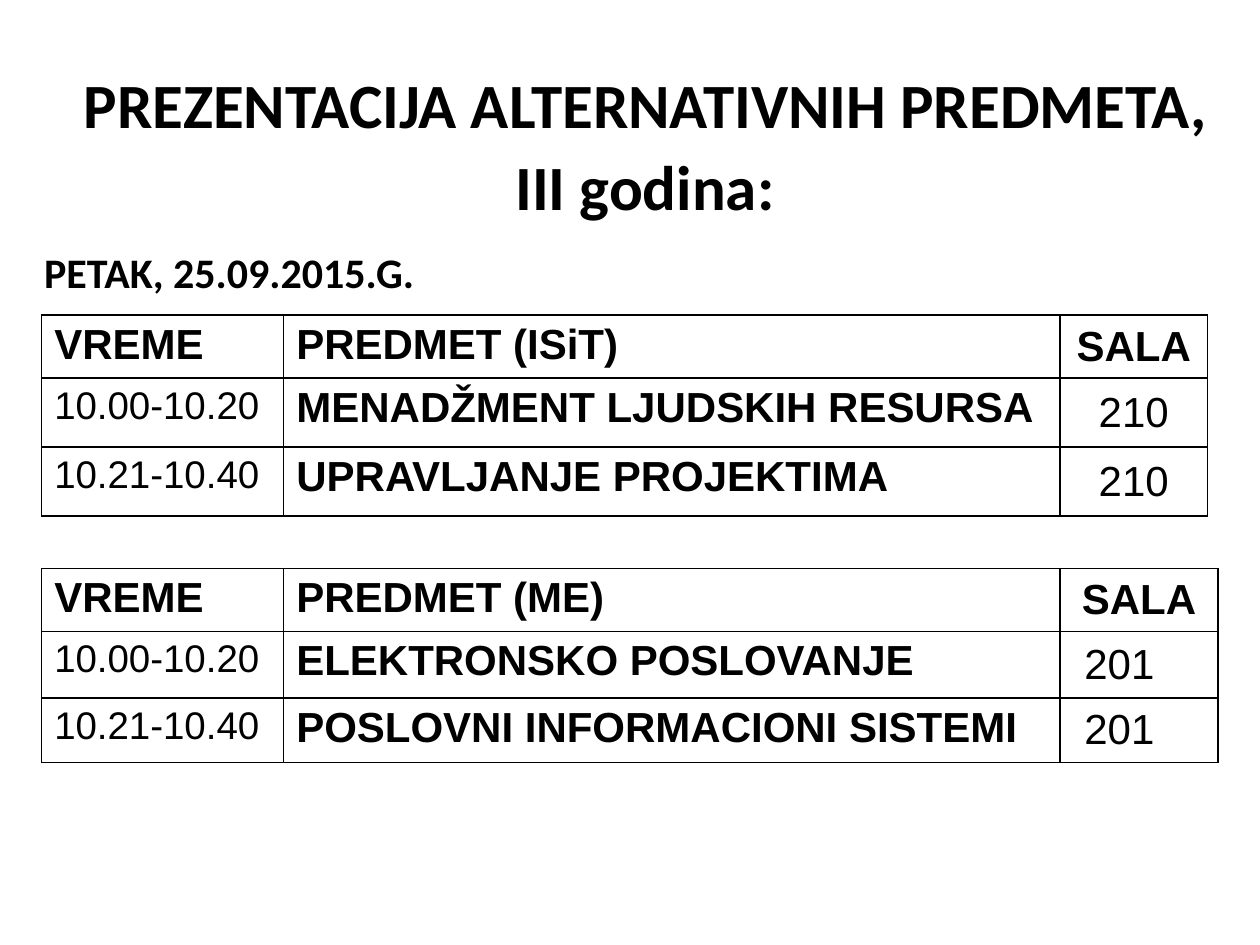
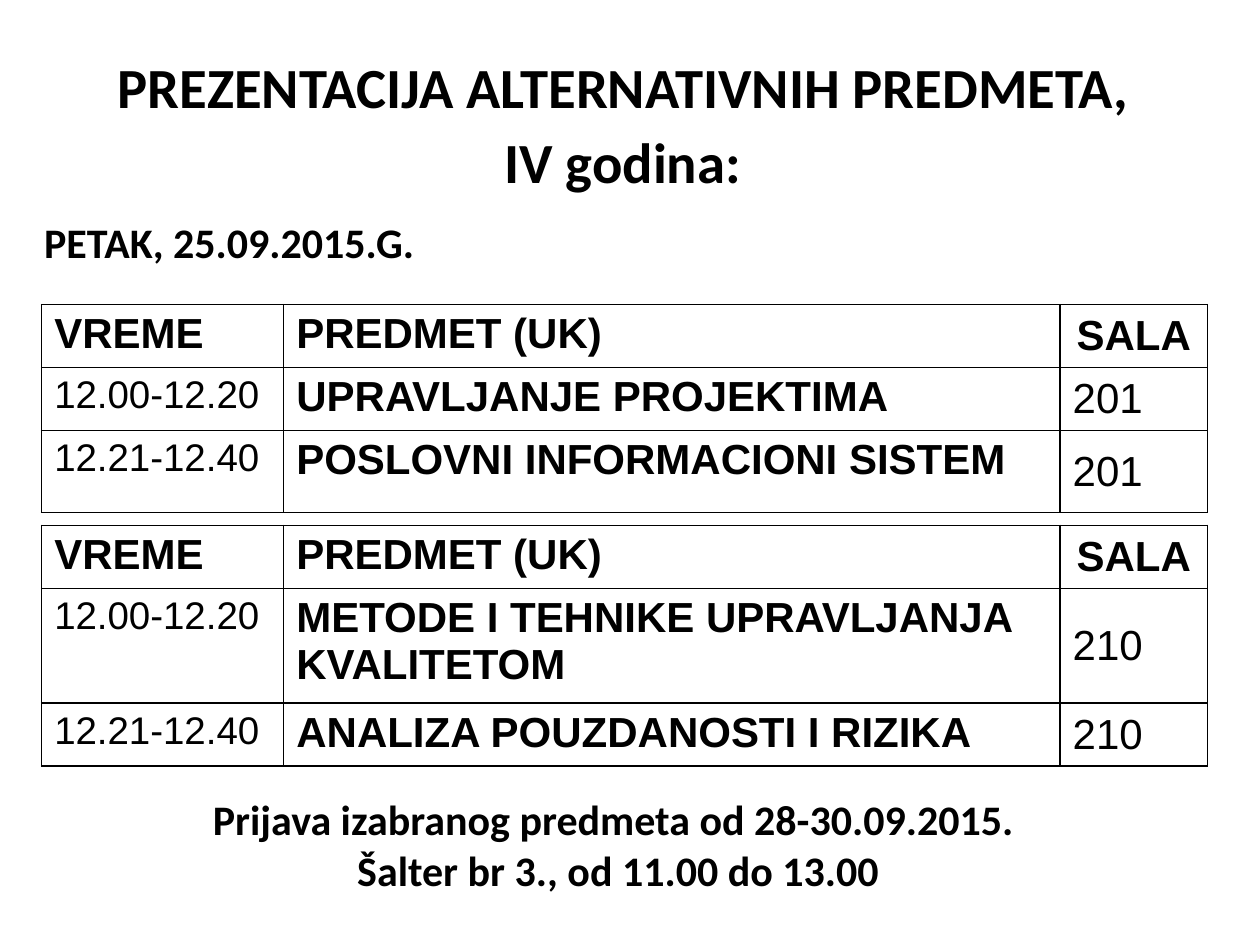
import dataclasses

import lxml.etree
import pptx
import pptx.dml.color
import pptx.enum.text
import pptx.oxml.ns
import pptx.util

Cm = pptx.util.Cm
Pt = pptx.util.Pt
ALIGN = pptx.enum.text.PP_ALIGN
ANCHOR = pptx.enum.text.MSO_ANCHOR


@dataclasses.dataclass(frozen=True)
class Theme:
    """Colours, fonts and sizes shared by both pages."""

    ink: str = "000000"
    paper: str = "FFFFFF"
    heading_font: str = "Calibri"
    table_font: str = "Arial"
    body_size: float = 24
    time_size: float = 22
    border_width: float = 1


@dataclasses.dataclass(frozen=True)
class Box:
    """A region of a page, in centimetres."""

    left: float
    top: float
    width: float
    height: float


THEME = Theme()
TABLE_LEFT = 0.84
TIME_WIDTH, SUBJECT_WIDTH, ROOM_WIDTH = 4.88, 15.65, 2.97


def add_text(para, text, *, size=THEME.body_size, font=THEME.heading_font, bold=True, align=ALIGN.LEFT):
    """Append formatted text to a paragraph, with a line break at each newline."""
    para.alignment = align
    for index, line in enumerate(text.split("\n")):
        if index:
            para.add_line_break()
        span = para.add_run()
        span.text = line
        span.font.name = font
        span.font.size = Pt(size)
        span.font.bold = bold
        span.font.color.rgb = pptx.dml.color.RGBColor.from_string(THEME.ink)


def add_frame(page, box, *, anchor=ANCHOR.MIDDLE, wrap=True):
    """Add an empty text box and return its text frame."""
    shape = page.shapes.add_textbox(Cm(box.left), Cm(box.top), Cm(box.width), Cm(box.height))
    frame = shape.text_frame
    frame.word_wrap = wrap
    frame.vertical_anchor = anchor
    return frame


def add_title(page, box, text, *, size, end_size):
    """Add the centred title, closed by a slightly larger space."""
    para = add_frame(page, box).paragraphs[0]
    add_text(para, text, size=size, align=ALIGN.CENTER)
    add_text(para, " ", size=end_size, align=ALIGN.CENTER)


def add_date(page, top):
    """Add the date line above the schedules."""
    frame = add_frame(page, Box(0.64, top, 8.03, 1.27), wrap=False)
    add_text(frame.paragraphs[0], "PETAK, 25.09.2015.G.")


def add_note(page, box, lines):
    """Add centred lines of closing information."""
    frame = add_frame(page, box, anchor=ANCHOR.TOP)
    for index, line in enumerate(lines):
        para = frame.add_paragraph() if index else frame.paragraphs[0]
        add_text(para, line, align=ALIGN.CENTER)


def style_cell(cell):
    """Give a cell four thin borders and no fill."""
    properties = cell._tc.get_or_add_tcPr()
    qn = pptx.oxml.ns.qn
    for side in ("a:lnL", "a:lnR", "a:lnT", "a:lnB"):
        line = lxml.etree.SubElement(properties, qn(side), w=str(Pt(THEME.border_width)))
        fill = lxml.etree.SubElement(line, qn("a:solidFill"))
        lxml.etree.SubElement(fill, qn("a:srgbClr"), val=THEME.ink)
    cell.fill.background()


def add_schedule(page, top, group, sessions, heights, *, room_width=ROOM_WIDTH, room_align=ALIGN.LEFT):
    """Add a table of times, subjects and rooms for one study group."""
    widths = (TIME_WIDTH, SUBJECT_WIDTH, room_width)
    rows = [("VREME", f"PREDMET ({group})", "SALA"), *sessions]
    table = page.shapes.add_table(
        len(rows), len(widths), Cm(TABLE_LEFT), Cm(top), Cm(sum(widths)), Cm(sum(heights))
    ).table
    table.first_row = table.horz_banding = False
    for column, width in zip(table.columns, widths):
        column.width = Cm(width)
    for row_index, (values, height) in enumerate(zip(rows, heights)):
        table.rows[row_index].height = Cm(height)
        header = row_index == 0
        formats = (
            {"bold": header, "size": THEME.body_size if header else THEME.time_size},
            {},
            {"bold": header, "align": ALIGN.CENTER if header else room_align},
        )
        for column_index, (text, style) in enumerate(zip(values, formats)):
            cell = table.cell(row_index, column_index)
            style_cell(cell)
            cell.vertical_anchor = ANCHOR.MIDDLE if column_index == 2 else ANCHOR.TOP
            add_text(cell.text_frame.paragraphs[0], text, font=THEME.table_font, **style)


def add_page(deck):
    """Add a blank page with the shared background."""
    page = deck.slides.add_slide(deck.slide_layouts[6])
    page.background.fill.solid()
    page.background.fill.fore_color.rgb = pptx.dml.color.RGBColor.from_string(THEME.paper)
    return page


def build_third_year(deck):
    """Build the page for the third year."""
    page = add_page(deck)
    add_title(
        page, Box(0, 0.76, 26.04, 4.32),
        "PREZENTACIJA ALTERNATIVNIH PREDMETA,\n III godina:", size=36, end_size=40,
    )
    add_date(page, 4.85)
    add_schedule(
        page, 6.35, "ISiT",
        [("10.00-10.20", "MENADŽMENT LJUDSKIH RESURSA", "210"),
         ("10.21-10.40", "UPRAVLJANJE PROJEKTIMA", "210")],
        (1.27, 1.39, 1.39), room_align=ALIGN.CENTER,
    )
    add_schedule(
        page, 11.46, "ME",
        [("10.00-10.20", "ELEKTRONSKO POSLOVANJE", " 201"),
         ("10.21-10.40", "POSLOVNI INFORMACIONI SISTEMI", " 201")],
        (1.27, 1.34, 1.3), room_width=3.18,
    )


def build_fourth_year(deck):
    """Build the page for the fourth year."""
    page = add_page(deck)
    add_title(
        page, Box(0, 0.76, 25.4, 3.48),
        "PREZENTACIJA ALTERNATIVNIH PREDMETA, \nIV godina:", size=32.4, end_size=36,
    )
    add_date(page, 4.24)
    add_schedule(
        page, 6.14, "UK",
        [("12.00-12.20", "UPRAVLJANJE PROJEKTIMA", "201"),
         ("12.21-12.40", "POSLOVNI INFORMACIONI SISTEM", "201")],
        (1.27, 1.27, 1.65),
    )
    add_schedule(
        page, 10.59, "UK",
        [("12.00-12.20", "METODE I TEHNIKE UPRAVLJANJA KVALITETOM", "210"),
         ("12.21-12.40", "ANALIZA POUZDANOSTI I RIZIKA", "210")],
        (1.27, 2.31, 1.27),
    )
    add_note(
        page, Box(4.01, 15.88, 16.71, 2.31),
        ("Prijava izabranog predmeta od 28-30.09.2015. ", " Šalter br 3., od 11.00 do 13.00"),
    )


def main():
    """Build and save the deck."""
    deck = pptx.Presentation()
    deck.slide_width, deck.slide_height = Cm(25.4), Cm(19.05)
    build_third_year(deck)
    build_fourth_year(deck)
    deck.save("out.pptx")


if __name__ == "__main__":
    main()
